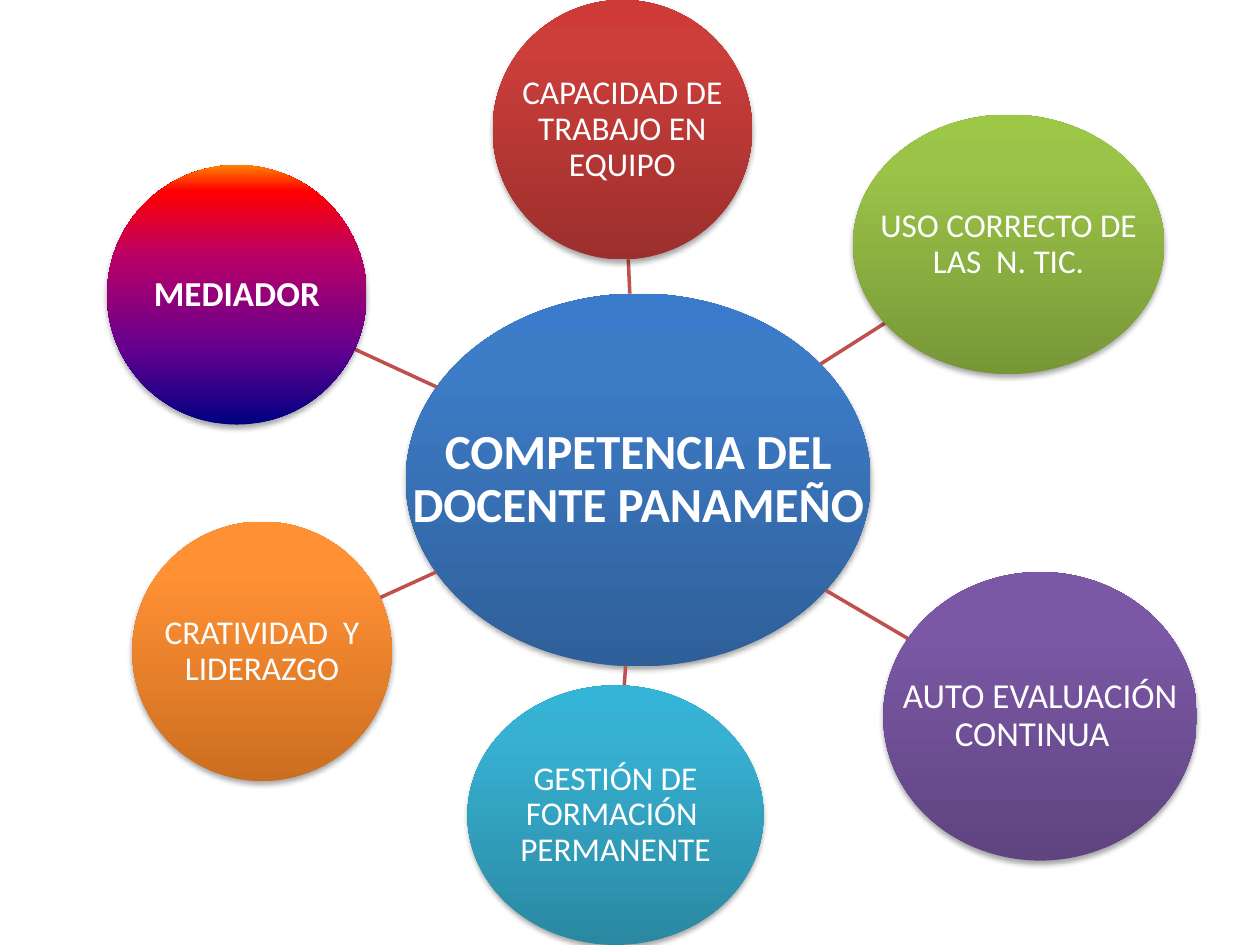
from math import hypot
from lxml.etree import SubElement
from pptx import Presentation
from pptx.dml.color import RGBColor
from pptx.enum.shapes import MSO_CONNECTOR, MSO_SHAPE
from pptx.enum.text import MSO_ANCHOR, PP_ALIGN
from pptx.oxml.ns import qn
from pptx.util import Inches, Pt

SLIDE_W, SLIDE_H = 10, 7.5

THEME = {
    "font": "Calibri",
    "text": "FFFFFF",
    "spoke": "C0504D",
    "spoke_width": 2,
    "title_size": 28,
    "large_size": 20,
    "label_size": 19,
    "line_spacing": 0.9,
    # gradient stops from bottom (0 %) to top (100 %)
    "blue": [(0, "2F5F99"), (80, "3D7CC7"), (100, "3A7CCB")],
    "red": [(0, "9C2F2D"), (80, "CB3E3A"), (100, "CE3B37")],
    "green": [(0, "779737"), (80, "9BC348"), (100, "9DC746")],
    "purple": [(0, "5F4480"), (80, "7B58A6"), (100, "7C57A8")],
    "aqua": [(0, "2A88A2"), (80, "37B1D2"), (100, "34B4D6")],
    "orange": [(0, "CC6E20"), (80, "FF9034"), (100, "FF9136")],
    "sunset": [(0, "000082"), (30, "66008F"), (65, "BA0066"),
               (90, "FF0000"), (100, "FF8200")],
}

# text, (left, top, width, height) in inches, gradient, size, bold
HUB = ("COMPETENCIA DEL DOCENTE PANAMEÑO", (3.22, 2.33, 3.69, 2.96),
       "blue", "title_size", True)
COMPETENCIES = [
    ("CAPACIDAD DE TRABAJO EN EQUIPO", (3.91, 0, 2.06, 2.06),
     "red", "label_size", False),
    ("USO CORRECTO DE LAS  N. TIC.", (6.77, 0.91, 2.47, 2.06),
     "green", "label_size", False),
    ("AUTO EVALUACIÓN CONTINUA  ", (7.01, 4.54, 2.49, 2.29),
     "purple", "large_size", False),
    ("GESTIÓN DE FORMACIÓN  PERMANENTE", (3.71, 5.44, 2.35, 2.06),
     "aqua", "label_size", False),
    ("CRATIVIDAD  Y LIDERAZGO", (1.05, 4.14, 2.06, 2.06),
     "orange", "label_size", False),
    ("MEDIADOR", (0.85, 1.31, 2.06, 2.06), "sunset", "large_size", True),
]


def center(box):
    left, top, width, height = box
    return left + width / 2, top + height / 2


def rim_point(box, target):
    """Point where the ray from the ellipse's center to target leaves the ellipse."""
    x, y = center(box)
    dx, dy = target[0] - x, target[1] - y
    share = 1 / hypot(dx / (box[2] / 2), dy / (box[3] / 2))
    return x + dx * share, y + dy * share


def add_color(parent, color):
    return SubElement(parent, qn("a:srgbClr"), val=color)


def fill_gradient(ellipse, stops):
    ellipse.fill.gradient()
    gradient = ellipse.fill._xPr.find(qn("a:gradFill"))
    stop_list = gradient.find(qn("a:gsLst"))
    for old_stop in list(stop_list):
        stop_list.remove(old_stop)
    for percent, color in stops:
        add_color(SubElement(stop_list, qn("a:gs"), pos=str(percent * 1000)), color)
    gradient.find(qn("a:lin")).set("ang", str(270 * 60000))


def add_soft_shadow(ellipse):
    ellipse.shadow.inherit = False
    effects = ellipse._element.spPr.find(qn("a:effectLst"))
    shadow = SubElement(effects, qn("a:outerShdw"), blurRad=str(Pt(3.1)),
                        dist=str(Pt(1.8)), dir=str(90 * 60000), rotWithShape="0")
    SubElement(add_color(shadow, "000000"), qn("a:alpha"), val="35000")


def add_bubble(slide, text, box, gradient, size, bold):
    frame = [Inches(length) for length in box]
    ellipse = slide.shapes.add_shape(MSO_SHAPE.OVAL, *frame)
    fill_gradient(ellipse, THEME[gradient])
    ellipse.line.fill.background()
    add_soft_shadow(ellipse)

    # The label spans the full bubble, wider than an ellipse's own text area.
    label = slide.shapes.add_textbox(*frame).text_frame
    label.word_wrap = True
    label.vertical_anchor = MSO_ANCHOR.MIDDLE
    inset = Inches(0.02 if size == "title_size" else 0.01)
    label.margin_left = label.margin_right = inset
    label.margin_top = label.margin_bottom = inset
    paragraph = label.paragraphs[0]
    paragraph.alignment = PP_ALIGN.CENTER
    paragraph.line_spacing = THEME["line_spacing"]
    run = paragraph.add_run()
    run.text = text
    run.font.name = THEME["font"]
    run.font.size = Pt(THEME[size])
    run.font.bold = bold
    run.font.color.rgb = RGBColor.from_string(THEME["text"])


def add_spoke(slide, hub_box, box):
    start = rim_point(hub_box, center(box))
    end = rim_point(box, center(hub_box))
    spoke = slide.shapes.add_connector(
        MSO_CONNECTOR.STRAIGHT, *(Inches(length) for length in start + end))
    spoke.line.color.rgb = RGBColor.from_string(THEME["spoke"])
    spoke.line.width = Pt(THEME["spoke_width"])
    SubElement(spoke._element.spPr, qn("a:effectLst"))


def main():
    deck = Presentation()
    deck.slide_width, deck.slide_height = Inches(SLIDE_W), Inches(SLIDE_H)
    slide = deck.slides.add_slide(deck.slide_layouts[6])
    add_bubble(slide, *HUB)
    for competency in COMPETENCIES:
        add_spoke(slide, HUB[1], competency[1])
        add_bubble(slide, *competency)
    deck.save("out.pptx")


if __name__ == "__main__":
    main()
